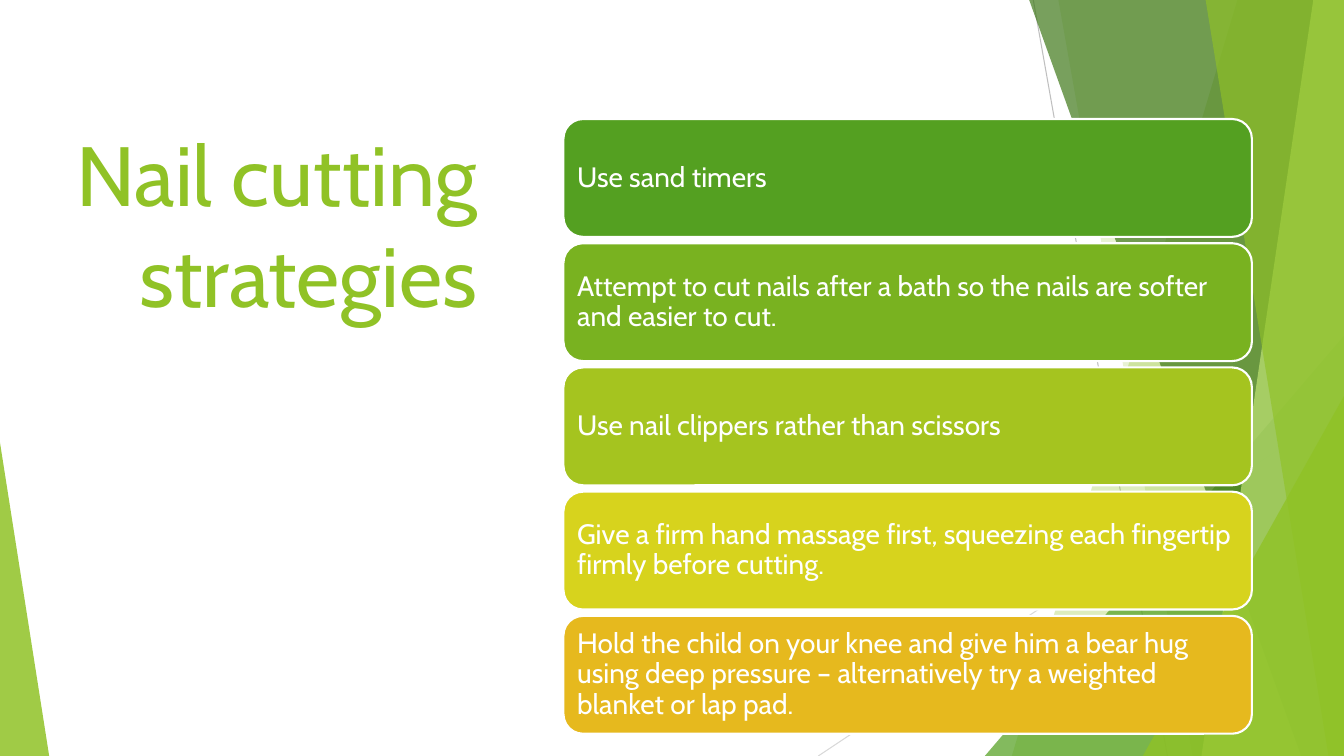
from pptx import Presentation
from pptx import util as u
from pptx.dml.color import RGBColor
from pptx.enum import shapes, text
from pptx.oxml.ns import qn
from lxml import etree

Cm = u.Cm
W, H = 33.87, 19.05


def paint(sp, color, alpha=100):
    sp.shadow.inherit = False
    sp.fill.solid()
    sp.fill.fore_color.rgb = RGBColor.from_string(color)
    if alpha < 100:
        clr = sp.fill._xPr.find(qn("a:solidFill"))[0]
        etree.SubElement(clr, qn("a:alpha"), val=str(alpha * 1000))
    sp.line.fill.background()


def write(tf, words, size, color):
    tf.word_wrap = True
    p = tf.paragraphs[0]
    r = p.add_run()
    r.text = words
    r.font.name = "Cabin"
    r.font.size = u.Pt(size)
    r.font.color.rgb = RGBColor.from_string(color)
    return p


prs = Presentation()
prs.slide_width, prs.slide_height = Cm(W), Cm(H)
slide = prs.slides.add_slide(prs.slide_layouts[6])

# Thin background lines
for x1, y1, x2, y2, color in [
    (26.04, 0, 29.42, H, "BFBFBF"),
    (W, 10.23, 20.62, H, "D9D9D9"),
]:
    line = slide.shapes.add_connector(
        shapes.MSO_CONNECTOR.STRAIGHT, Cm(x1), Cm(y1), Cm(x2), Cm(y2))
    line.line.color.rgb = RGBColor.from_string(color)
    line.line.width = u.Pt(0.75)
    etree.SubElement(line._element.spPr, qn("a:effectLst"))

# Translucent facets, back to front:
# bands run to the right edge, triangles stand on the bottom edge
facets = [
    ("band", 31.19, 25.5, "90C226", 30),
    ("band", 26.67, 30.05, "90C226", 20),
    ("triangle", 24.82, 8.46, 9.05, 1, "54A021", 72),
    ("band", 25.93, 32.79, "3F7819", 70),
    ("band", 33.1, 30.28, "C0E474", 70),
    ("band", 30.38, 33.48, "90C226", 65),
    ("triangle", 28.8, 9.98, 5.07, 1, "90C226", 80),
    ("triangle", 0, 11.15, 1.24, 0, "90C226", 85),
]
for kind, *geometry, color, alpha in facets:
    if kind == "band":
        top_x, bottom_x = geometry
        ff = slide.shapes.build_freeform(Cm(top_x), Cm(-0.02))
        ff.add_line_segments(
            [(Cm(W), Cm(-0.02)), (Cm(W), Cm(H)), (Cm(bottom_x), Cm(H))])
        sp = ff.convert_to_shape()
    else:
        left, top, width, apex = geometry
        sp = slide.shapes.add_shape(
            shapes.MSO_SHAPE.ISOSCELES_TRIANGLE,
            Cm(left), Cm(top), Cm(width), Cm(H - top))
        sp.adjustments[0] = apex
    paint(sp, color, alpha)

# Title
title = slide.shapes.add_textbox(Cm(1.32), Cm(2.97), Cm(10.95), Cm(15.52))
p = write(title.text_frame, "Nail cutting strategies", 60, "90C226")
p.alignment = text.PP_ALIGN.RIGHT

# Strategy bars
strategies = [
    ("Use sand timers", "54A021"),
    ("Attempt to cut nails after a bath so the nails are softer and easier "
     "to cut.", "79B220"),
    ("Use nail clippers rather than scissors", "A5C41F"),
    ("Give a firm hand massage first, squeezing each fingertip firmly before "
     "cutting.", "D7D31D"),
    ("Hold the child on your knee and give him a bear hug using deep pressure "
     "– alternatively try a weighted blanket or lap pad.", "E6B91E"),
]
for i, (words, color) in enumerate(strategies):
    sp = slide.shapes.add_shape(
        shapes.MSO_SHAPE.ROUNDED_RECTANGLE,
        Cm(14.2), Cm(3 + 3.13 * i), Cm(17.35), Cm(2.97))
    paint(sp, color)
    sp.line.color.rgb = RGBColor.from_string("FFFFFF")
    sp.line.width = u.Pt(1.5)
    tf = sp.text_frame
    tf.margin_left = tf.margin_right = tf.margin_top = tf.margin_bottom = Cm(0.2)
    tf.vertical_anchor = text.MSO_ANCHOR.MIDDLE
    p = write(tf, words, 20, "FFFFFF")
    p.alignment = text.PP_ALIGN.LEFT
    p.line_spacing = 0.9

prs.save("out.pptx")
